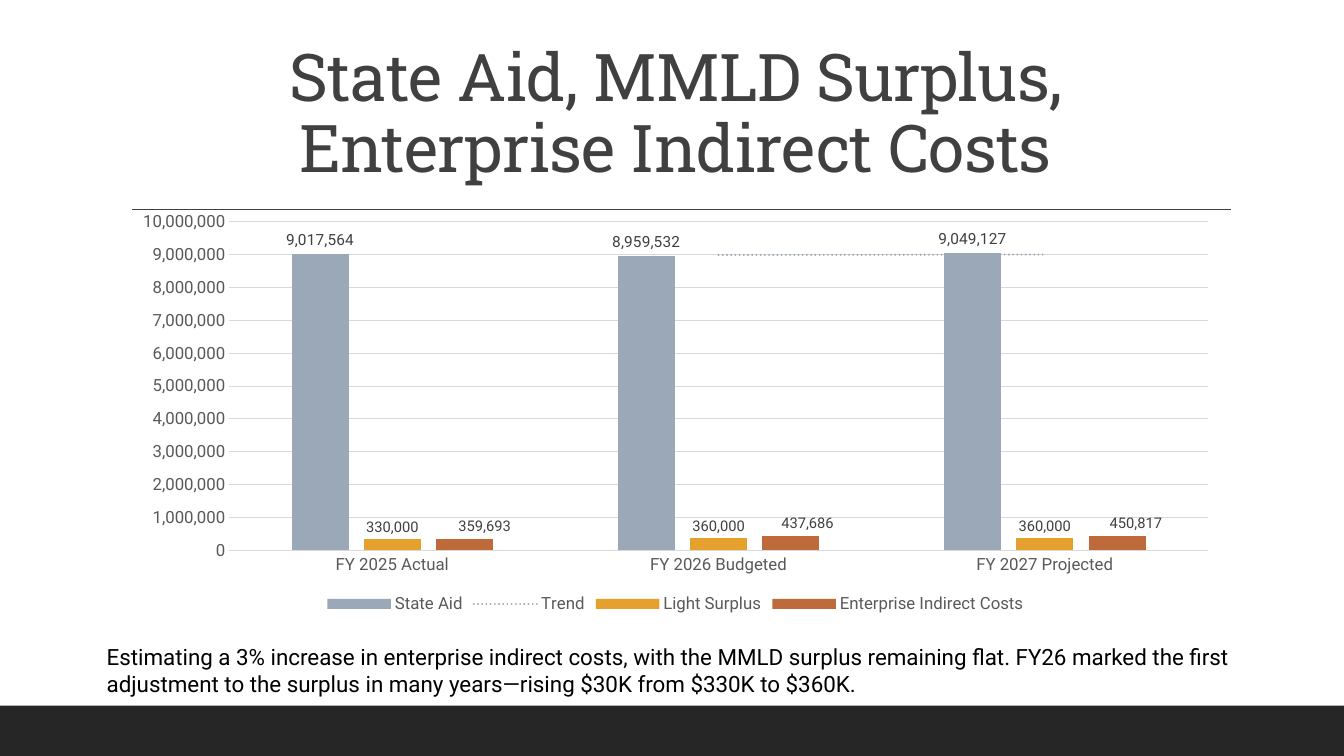
import pptx
import pptx.chart.data
import pptx.dml.color
import pptx.enum.chart
import pptx.enum.dml
import pptx.enum.shapes
import pptx.enum.text
import pptx.oxml
import pptx.oxml.ns
import pptx.util

PX = 9144  # 100 px to the inch
RGB = pptx.dml.color.RGBColor
BLACK = RGB(0x00, 0x00, 0x00)
BAND = RGB(0x26, 0x26, 0x26)
DARK = RGB(0x40, 0x40, 0x40)
GRAY = RGB(0x59, 0x59, 0x59)
GRID = RGB(0xD9, 0xD9, 0xD9)
BLUE_GRAY = RGB(0x9B, 0xA8, 0xB7)
GOLD = RGB(0xE6, 0xA0, 0x2E)
RUST = RGB(0xBF, 0x6A, 0x3B)


def box(*lengths):
    return [v * PX for v in lengths]


def set_font(font, size, color, name="Roboto"):
    values = {"size": pptx.util.Pt(size), "name": name, "bold": False}
    for key, value in values.items():
        setattr(font, key, value)
    font.color.rgb = color


prs = pptx.Presentation()
prs.slide_width, prs.slide_height = box(1333, 750)
s = prs.slides.add_slide(prs.slide_layouts[6])

# Footer band
sp = s.shapes.add_shape(pptx.enum.shapes.MSO_SHAPE.RECTANGLE, *box(0, 700, 1333, 50))
sp.shadow.inherit = False
sp.fill.solid()
sp.fill.fore_color.rgb = BAND
sp.line.fill.background()

# Rule under the title
rule = s.shapes.add_connector(
    pptx.enum.shapes.MSO_CONNECTOR.STRAIGHT, *box(131, 208, 1221, 208))
rule.line.color.rgb = DARK
rule.line.width = pptx.util.Pt(1)
rule._element.spPr.append(pptx.oxml.parse_xml(
    f'<a:effectLst {pptx.oxml.ns.nsdecls("a")}/>'))

# Title and note
ANCHOR = pptx.enum.text.MSO_ANCHOR
ALIGN = pptx.enum.text.PP_ALIGN
TEXTS = [
    ("State Aid, MMLD Surplus, Enterprise Indirect Costs", (120, 31, 1100, 159),
     47, DARK, "Roboto Slab", ANCHOR.BOTTOM, ALIGN.CENTER, 0.9, "-50"),
    ("Estimating a 3% increase in enterprise indirect costs, with the MMLD surplus "
     "remaining flat. FY26 marked the first adjustment to the surplus in many "
     "years—rising $30K from $330K to $360K.", (96, 633, 1147, 64),
     16, BLACK, "Roboto", ANCHOR.TOP, ALIGN.LEFT, 1.0, "0"),
]
for text, place, size, color, name, anchor, align, spacing, tracking in TEXTS:
    tf = s.shapes.add_textbox(*box(*place)).text_frame
    tf.word_wrap = True
    tf.vertical_anchor = anchor
    p = tf.paragraphs[0]
    p.alignment = align
    p.line_spacing = spacing
    r = p.add_run()
    r.text = text
    set_font(r.font, size, color, name)
    r.font._element.set("spc", tracking)

# Chart data: name, values, colour, label size
SERIES = [
    ("State Aid", (9017564, 8959532, 9049127), BLUE_GRAY, 11),
    ("Light Surplus", (330000, 360000, 360000), GOLD, 10.5),
    ("Enterprise Indirect Costs", (359693, 437686, 450817), RUST, 10.5),
]
data = pptx.chart.data.CategoryChartData(number_format="#,##0")
data.categories = ["FY 2025 Actual", "FY 2026 Budgeted", "FY 2027 Projected"]
for name, values, color, size in SERIES:
    data.add_series(name, values)

XL = pptx.enum.chart
chart = s.shapes.add_chart(
    XL.XL_CHART_TYPE.COLUMN_CLUSTERED, *box(120, 202, 1100, 411), data).chart
set_font(chart.font, 10, BLACK)
chart.has_title = False
chart.has_legend = True
chart.legend.position = XL.XL_LEGEND_POSITION.BOTTOM
chart.legend.include_in_layout = False
set_font(chart.legend.font, 12, GRAY)

# Axes
for axis in (chart.category_axis, chart.value_axis):
    axis.major_tick_mark = axis.minor_tick_mark = XL.XL_TICK_MARK.NONE
    set_font(axis.tick_labels.font, 12, GRAY)
value_axis = chart.value_axis
value_axis.minimum_scale, value_axis.maximum_scale = 0, 10000000
value_axis.major_unit = 1000000
value_axis.tick_labels.number_format = "#,##0"
value_axis.tick_labels.number_format_is_linked = False
value_axis.format.line.fill.background()
for line in (chart.category_axis.format.line, value_axis.major_gridlines.format.line):
    line.color.rgb = GRID
    line.width = pptx.util.Pt(0.75)

# Columns and their labels
plot = chart.plots[0]
plot.vary_by_categories = False
plot.gap_width, plot.overlap = 219, -27
LABEL_FORMAT = {
    "show_value": True,
    "number_format": "#,##0",
    "number_format_is_linked": False,
    "position": XL.XL_LABEL_POSITION.OUTSIDE_END,
}
for ser, (name, values, color, size) in zip(plot.series, SERIES):
    ser.format.fill.solid()
    ser.format.fill.fore_color.rgb = color
    for key, value in LABEL_FORMAT.items():
        setattr(ser.data_labels, key, value)
    set_font(ser.data_labels.font, size, DARK)

# Indirect cost labels sit a little to the right of their columns
C_NS = pptx.oxml.ns.nsdecls("c")
state_aid, light_surplus, indirect = plot.series
for i, shift in enumerate((0.018, 0.015, 0.017)):
    label = indirect.points[i].data_label
    set_font(label.font, 10.5, DARK)
    label.position = XL.XL_LABEL_POSITION.OUTSIDE_END
    d_lbl = indirect._element.xpath(f"c:dLbls/c:dLbl[c:idx/@val='{i}']")[0]
    d_lbl.insert(1, pptx.oxml.parse_xml(
        f'<c:layout {C_NS}><c:manualLayout><c:x val="{shift}"/><c:y val="0"/>'
        '</c:manualLayout></c:layout>'))

# Moving average of state aid
trend = pptx.oxml.parse_xml(
    f'<c:trendline {pptx.oxml.ns.nsdecls("c", "a")}><c:name>Trend</c:name>'
    f'<c:spPr><a:ln w="{pptx.util.Pt(1.5)}" cap="rnd"><a:solidFill>'
    f'<a:srgbClr val="{BLUE_GRAY}"/></a:solidFill><a:prstDash val="sysDot"/></a:ln></c:spPr>'
    '<c:trendlineType val="movingAvg"/><c:period val="2"/>'
    '<c:dispRSqr val="0"/><c:dispEq val="0"/></c:trendline>')
state_aid._element.xpath("c:cat")[0].addprevious(trend)

prs.save("out.pptx")
